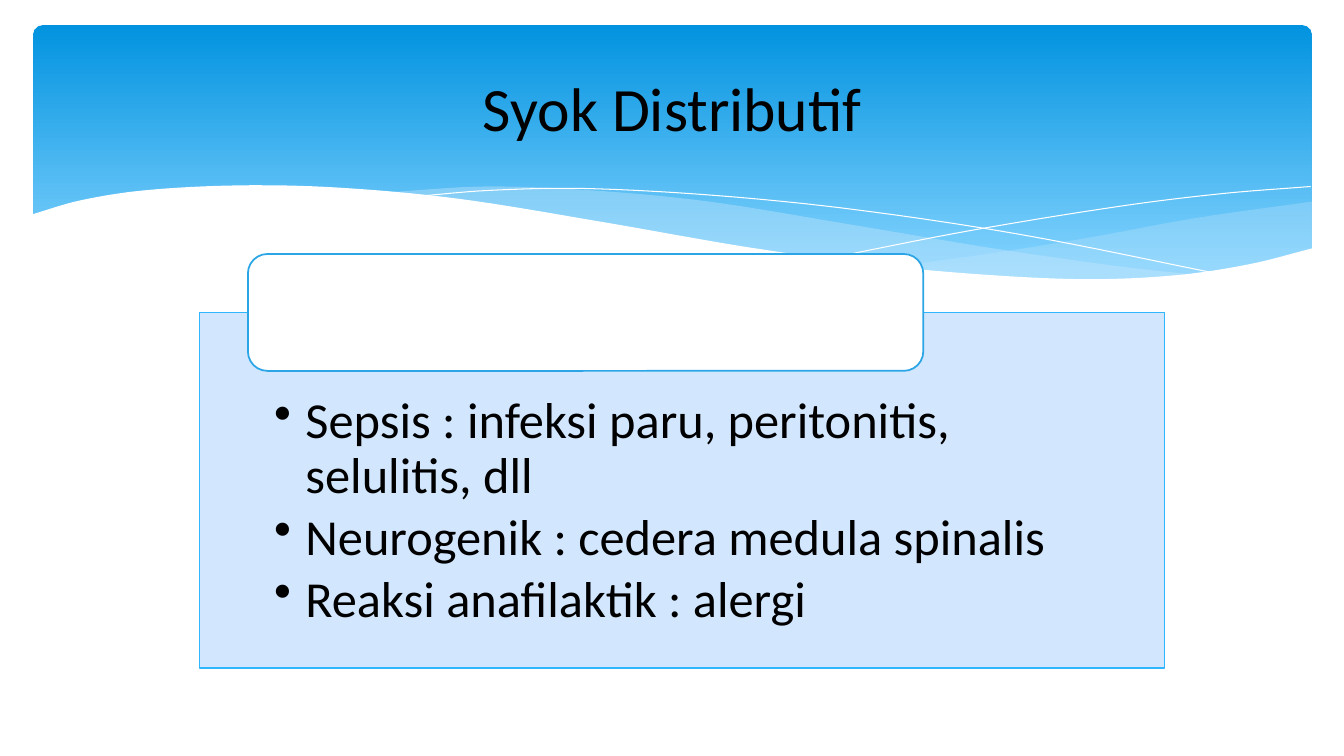
from lxml import etree
from pptx import Presentation
from pptx.dml.color import RGBColor
from pptx.enum import shapes, text
from pptx.oxml import ns
from pptx.util import Inches, Pt

FONT = "Calibri"
BLACK = RGBColor(0x00, 0x00, 0x00)
WHITE = RGBColor(0xFF, 0xFF, 0xFF)
DEEP_BLUE = RGBColor(0x02, 0x93, 0xE0)
SKY_BLUE = RGBColor(0x83, 0xD3, 0xFE)
PALE_BLUE = RGBColor(0xC6, 0xE7, 0xFC)
CARD_FILL = RGBColor(0xCE, 0xE5, 0xFE)
CARD_LINE = RGBColor(0x31, 0xB6, 0xFD)
TAB_LINE = RGBColor(0x2C, 0xA5, 0xE6)

RIGHT_TOP = [(8.49, 2.4), (9.39, 2.28), (10.4, 2.12), (11.55, 1.91), (12.68, 1.75)]
RIGHT_BOTTOM = [(8.49, 2.4), (9.6, 2.5), (10.52, 2.53), (11.53, 2.47),
                (12.14, 2.37), (12.68, 2.22)]
MIDDLE_TOP = [(3.49, 1.66), (4.49, 1.6), (5.56, 1.64), (6.7, 1.75),
              (8.06, 1.97), (9.56, 2.22), (10.83, 2.4), (11.57, 2.48)]
MIDDLE_BOTTOM = [(3.49, 1.66), (4.5, 1.78), (5.66, 1.97), (7.22, 2.23),
                 (8.54, 2.41), (9.65, 2.51), (10.57, 2.53), (11.57, 2.48)]
FALLING_LINE = [(3.79, 1.7), (4.51, 1.64), (5.44, 1.62), (6.77, 1.69),
                (8.15, 1.83), (9.81, 2.08), (11.77, 2.47)]
RISING_LINE = [(7.85, 2.32), (9.28, 2.04), (10.82, 1.79), (11.8, 1.67), (12.67, 1.6)]
FRONT_WAVE = [(-0.02, 1.88), (0.46, 1.74), (1.09, 1.64), (2.02, 1.59), (3, 1.61),
              (4.2, 1.72), (5.63, 1.95), (7.07, 2.2), (8.3, 2.37), (9.36, 2.47),
              (10.45, 2.52), (11.34, 2.48), (12.07, 2.37), (12.7, 2.21)]
FRONT_BASE = [(12.7, 3.04), (-0.02, 3.04)]

CAUSES = ["Sepsis : infeksi paru, peritonitis, selulitis, dll",
          "Neurogenik : cedera medula spinalis",
          "Reaksi anafilaktik : alergi"]


def smooth_curve(knots, steps=8):
    last = len(knots) - 1
    slopes = []
    for i in range(last + 1):
        (xa, ya), (xb, yb) = knots[max(i - 1, 0)], knots[min(i + 1, last)]
        slopes.append((yb - ya) / (xb - xa))
    points = []
    for i in range(last):
        (xa, ya), (xb, yb) = knots[i], knots[i + 1]
        dx = xb - xa
        for n in range(steps):
            t = n / steps
            y = ((1 + 2 * t) * (1 - t) ** 2 * ya + t * (1 - t) ** 2 * dx * slopes[i]
                 + t * t * (3 - 2 * t) * yb + t * t * (t - 1) * dx * slopes[i + 1])
            points.append((xa + t * dx, y))
    return points + [knots[-1]]


def paint(sp, fill=None, opacity=100, line=None, width=0):
    sp.shadow.inherit = False
    if fill is None:
        sp.fill.background()
    else:
        sp.fill.solid()
        sp.fill.fore_color.rgb = fill
        if opacity < 100:
            color = sp.element.spPr.find(".//" + ns.qn("a:srgbClr"))
            etree.SubElement(color, ns.qn("a:alpha")).set("val", str(opacity * 1000))
    if line is None:
        sp.line.fill.background()
    else:
        sp.line.color.rgb = line
        sp.line.width = Pt(width)


def add_path(s, left, top, points, close, **style):
    placed = [(Inches(left + x), Inches(top + y)) for x, y in points]
    builder = s.shapes.build_freeform(*placed[0])
    builder.add_line_segments(placed[1:], close=close)
    paint(builder.convert_to_shape(), **style)


def add_box(s, kind, left, top, width, height):
    return s.shapes.add_shape(kind, Inches(left), Inches(top),
                              Inches(width), Inches(height))


def add_wave_banner(s, left, top, width, height):
    sp = add_box(s, shapes.MSO_SHAPE.ROUNDED_RECTANGLE, left, top, width, height)
    paint(sp)
    sp.adjustments[0] = 0.034
    sp.fill.gradient()
    sp.fill.gradient_angle = 270
    for stop, color, position in zip(sp.fill.gradient_stops,
                                     (DEEP_BLUE, SKY_BLUE), (0, 0.9)):
        stop.color.rgb = color
        stop.position = position
    for upper, lower, opacity in ((RIGHT_TOP, RIGHT_BOTTOM, 29),
                                  (MIDDLE_TOP, MIDDLE_BOTTOM, 40)):
        outline = smooth_curve(upper) + smooth_curve(lower)[::-1]
        add_path(s, left, top, outline, True, fill=PALE_BLUE, opacity=opacity)
    for knots in (FALLING_LINE, RISING_LINE):
        add_path(s, left, top, smooth_curve(knots), False, line=WHITE)
    add_path(s, left, top, smooth_curve(FRONT_WAVE) + FRONT_BASE, True, fill=WHITE)


def add_cause_card(s, left, top, width, height):
    card = add_box(s, shapes.MSO_SHAPE.RECTANGLE, left, top, width, height)
    paint(card, CARD_FILL, 90, CARD_LINE, 1.25)
    tf = card.text_frame
    tf.word_wrap = True
    tf.vertical_anchor = text.MSO_ANCHOR.TOP
    tf.margin_left = tf.margin_right = Inches(0.74)
    tf.margin_top, tf.margin_bottom = Inches(0.82), Inches(0.28)
    for i, cause in enumerate(CAUSES):
        p = tf.add_paragraph() if i else tf.paragraphs[0]
        p.alignment = text.PP_ALIGN.LEFT
        p.line_spacing = 0.9
        p.space_after = Pt(5.4)
        pPr = p._p.get_or_add_pPr()
        pPr.set("marL", str(Inches(0.31)))
        pPr.set("indent", str(Inches(-0.31)))
        etree.SubElement(pPr, ns.qn("a:buChar")).set("char", "•")
        add_run(p, cause, 36)

    tab = add_box(s, shapes.MSO_SHAPE.ROUNDED_RECTANGLE,
                  left + width * 0.05, top - 0.58, width * 0.7, 1.16)
    paint(tab, WHITE, line=TAB_LINE, width=1.25)


def add_run(p, words, size):
    r = p.add_run()
    r.text = words
    r.font.name = FONT
    r.font.size = Pt(size)
    r.font.color.rgb = BLACK


def place_title(s, left, top, width, height):
    title = s.shapes.title
    title.left, title.top = Inches(left), Inches(top)
    title.width, title.height = Inches(width), Inches(height)
    tf = title.text_frame
    tf.word_wrap = True
    tf.vertical_anchor = text.MSO_ANCHOR.MIDDLE
    p = tf.paragraphs[0]
    p.alignment = text.PP_ALIGN.CENTER
    add_run(p, "Syok Distributif", 44)
    title.element.getparent().append(title.element)


def main():
    prs = Presentation()
    prs.slide_width, prs.slide_height = Inches(13.33), Inches(7.5)
    s = prs.slides.add_slide(prs.slide_layouts[5])
    add_wave_banner(s, 0.33, 0.25, 12.68, 2.7)
    add_cause_card(s, 1.98, 3.1, 9.57, 3.53)
    place_title(s, 0.67, 0.37, 12, 1.37)
    prs.save("out.pptx")


if __name__ == "__main__":
    main()
